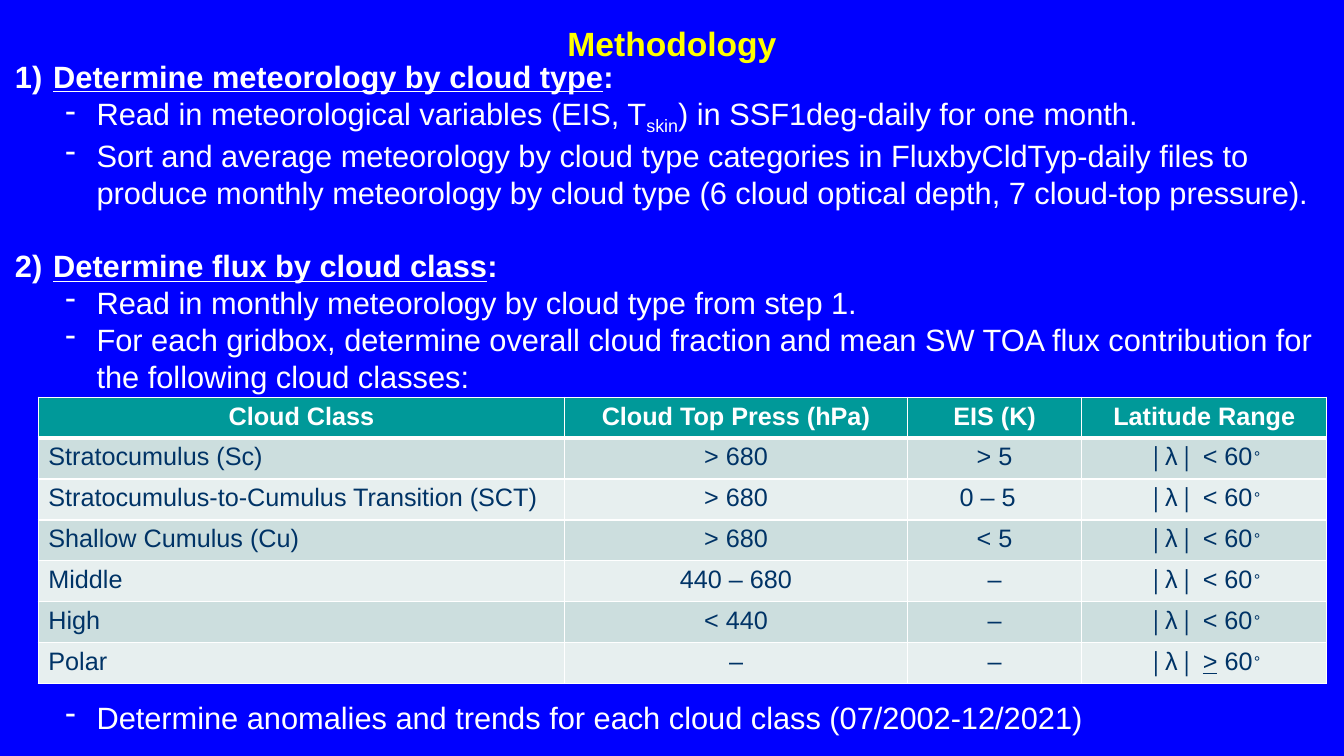
from lxml import etree
from pptx import Presentation
from pptx import util as u
from pptx.dml.color import RGBColor
from pptx.enum import text
from pptx.oxml import ns

BLUE = RGBColor(0x00, 0x00, 0xFF)
YELLOW = RGBColor(0xFF, 0xFF, 0x00)
WHITE = RGBColor(0xFF, 0xFF, 0xFF)
TEAL = RGBColor(0x00, 0x99, 0x99)
NAVY = RGBColor(0x00, 0x33, 0x66)
BANDS = [RGBColor(0xCC, 0xDE, 0xDE), RGBColor(0xE7, 0xEF, 0xEF)]
FONT = "Arial"

# Content: each text is a list of (words, style) spans
TITLE = "Methodology"
# (level, space before in points, spans)
STEPS = [
    (0, 0, [("Determine meteorology by cloud type", "underline"), (":", "")]),
    (1, 0, [("Read in meteorological variables (EIS, T", ""), ("skin", "sub"),
            (") in SSF1deg-daily for one month.", "")]),
    (1, 0, [("Sort and average meteorology by cloud type categories in "
             "FluxbyCldTyp-daily files to produce monthly meteorology by cloud "
             "type (6 cloud optical depth, 7 cloud-top pressure).", "")]),
    (0, 26.4, [("Determine flux by cloud class", "underline"), (":", "")]),
    (1, 0, [("Read in monthly meteorology by cloud type from step 1.", "")]),
    (1, 0, [("For each gridbox, determine overall cloud fraction and mean SW TOA "
             "flux contribution for the following cloud classes:", "")]),
    (1, 217, [("Determine anomalies and trends for each cloud class "
               "(07/2002-12/2021)", "")]),
]
BELOW_60 = [("∣λ∣ < 60", ""), ("∘", "super")]
FROM_60 = [("∣λ∣ ", ""), (">", "underline"), (" 60", ""), ("∘", "super")]
HEADER = ["Cloud Class", "Cloud Top Press (hPa)", "EIS (K)", "Latitude Range"]
CLASSES = [
    ("Stratocumulus (Sc)", "> 680", "> 5", BELOW_60),
    ("Stratocumulus-to-Cumulus Transition (SCT)", "> 680", "0 – 5", BELOW_60),
    ("Shallow Cumulus (Cu)", "> 680", "< 5", BELOW_60),
    ("Middle", "440 – 680", "–", BELOW_60),
    ("High", "< 440", "–", BELOW_60),
    ("Polar", "–", "–", FROM_60),
]
COLUMN_WIDTHS = [5.22, 3.4, 1.73, 2.43]
ROW_HEIGHT = 0.406
BASELINES = {"sub": "-25000", "super": "30000"}


def write(para, spans, size, color, bold=False):
    for words, style in spans:
        span = para.add_run()
        span.text = words
        if style == "underline":
            span.font.underline = True
        elif style in BASELINES:
            span.font._element.set("baseline", BASELINES[style])
    font = para.font
    font.name, font.size, font.bold = FONT, u.Pt(size), bold
    font.color.rgb = color


def set_bullet(para, level):
    para.level = level
    indent, hanging = [(0.38, 0.38), (0.81, 0.31)][level]
    props = para._p.get_or_add_pPr()
    props.set("marL", str(u.Inches(indent)))
    props.set("indent", str(-u.Inches(hanging)))
    if level == 0:
        etree.SubElement(props, ns.qn("a:buAutoNum"), type="arabicParenR")
    else:
        etree.SubElement(props, ns.qn("a:buFontTx"))
        etree.SubElement(props, ns.qn("a:buChar"), char="-")


def set_borders(cell, bottom):
    props = cell._tc.get_or_add_tcPr()
    for side, points in (("L", 1), ("R", 1), ("T", 1), ("B", bottom)):
        line = etree.SubElement(props, ns.qn(f"a:ln{side}"), w=str(u.Pt(points)))
        fill = etree.SubElement(line, ns.qn("a:solidFill"))
        etree.SubElement(fill, ns.qn("a:srgbClr"), val=str(WHITE))


deck = Presentation()
deck.slide_width, deck.slide_height = u.Inches(13.33), u.Inches(7.5)
page = deck.slides.add_slide(deck.slide_layouts[5])
page.background.fill.solid()
page.background.fill.fore_color.rgb = BLUE

# Title
title = page.shapes.title
title.left, title.top = u.Inches(0), u.Inches(0.18)
title.width, title.height = u.Inches(13.33), u.Inches(0.51)
title.text_frame.vertical_anchor = text.MSO_ANCHOR.TOP
title_para = title.text_frame.paragraphs[0]
title_para.alignment = text.PP_ALIGN.CENTER
write(title_para, [(TITLE, "")], 24, YELLOW, bold=True)

# Steps
box = page.shapes.add_textbox(u.Inches(0.05), u.Inches(0.52),
                              u.Inches(13.23), u.Inches(6.85))
frame = box.text_frame
frame.word_wrap = True
for number, (level, space, spans) in enumerate(STEPS):
    para = frame.add_paragraph() if number else frame.paragraphs[0]
    set_bullet(para, level)
    para.space_before = u.Pt(space)
    write(para, spans, 22, WHITE, bold=level == 0)

# Cloud class table
rows = [HEADER] + CLASSES
table = page.shapes.add_table(
    len(rows), len(HEADER), u.Inches(0.38), u.Inches(3.94),
    u.Inches(sum(COLUMN_WIDTHS)), u.Inches(ROW_HEIGHT * len(rows))).table
for column, width in zip(table.columns, COLUMN_WIDTHS):
    column.width = u.Inches(width)
for r, row in enumerate(rows):
    is_header = r == 0
    table.rows[r].height = u.Inches(ROW_HEIGHT)
    for c, content in enumerate(row):
        cell = table.cell(r, c)
        set_borders(cell, bottom=3 if is_header else 1)
        cell.fill.solid()
        cell.fill.fore_color.rgb = TEAL if is_header else BANDS[(r - 1) % 2]
        para = cell.text_frame.paragraphs[0]
        if is_header or c > 0:
            para.alignment = text.PP_ALIGN.CENTER
        spans = [(content, "")] if isinstance(content, str) else content
        write(para, spans, 18, WHITE if is_header else NAVY, bold=is_header)
# The EIS range sits slightly left of centre
table.cell(2, 2).margin_right = u.Inches(0.24)

deck.save("out.pptx")
